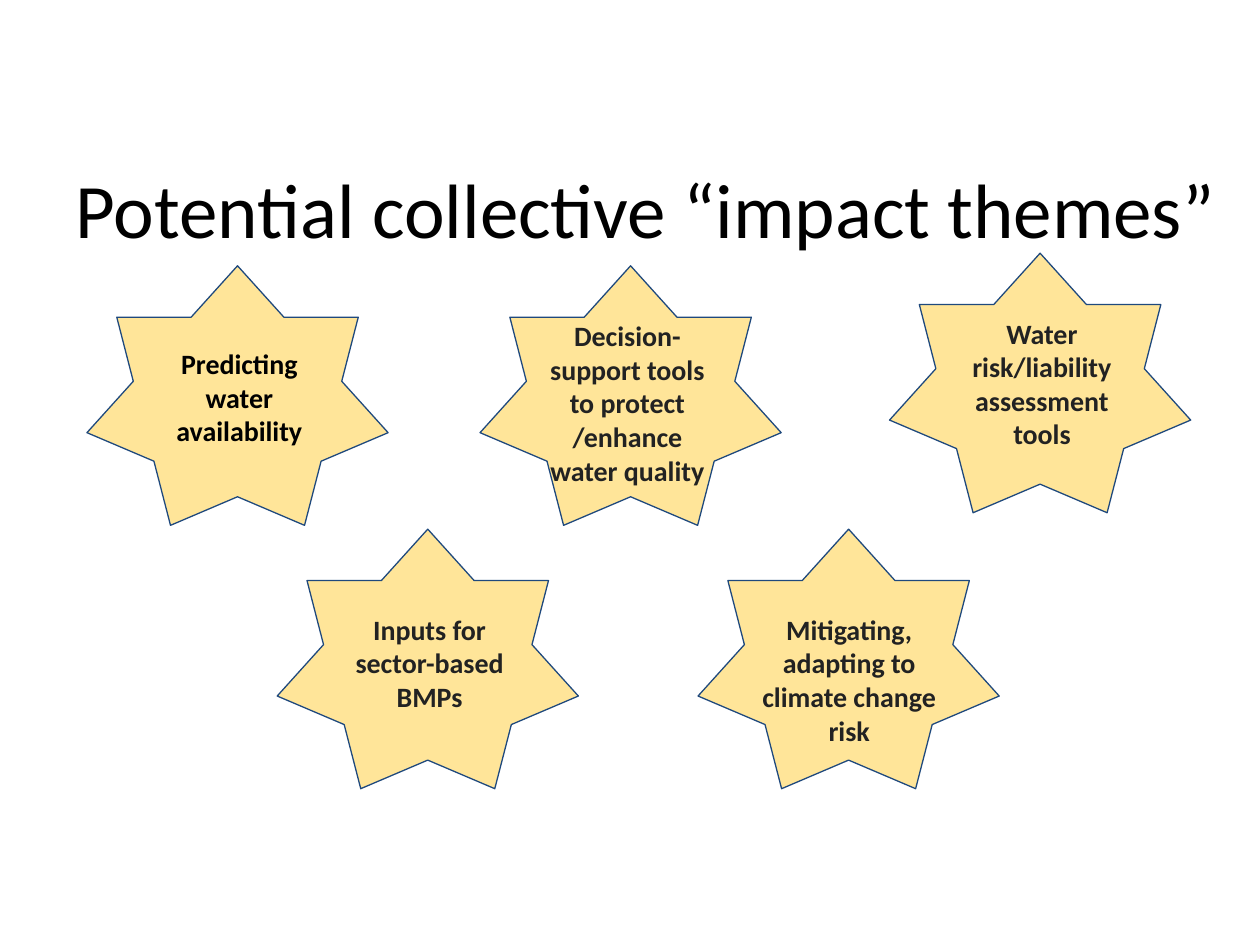
from pptx import Presentation
from pptx.dml.color import RGBColor
from pptx.enum.shapes import MSO_SHAPE
from pptx.enum.text import MSO_ANCHOR, PP_ALIGN
from pptx.util import Inches, Pt

TITLE = "Potential collective “impact themes”"
THEMES = [
    {"label": "Predicting water availability", "star": (0.69, 2.11), "text": (1.1, 2.65), "ink": "000000"},
    {"label": "Inputs for sector-based BMPs", "star": (2.2, 4.2), "text": (2.61, 4.76), "ink": "222222"},
    {"label": "Decision- support tools to protect /enhance water quality", "star": (3.81, 2.11),
     "text": (4.18, 2.43), "ink": "222222"},
    {"label": "Mitigating, adapting to climate change risk", "star": (5.54, 4.2),
     "text": (5.94, 4.76), "ink": "222222"},
    {"label": "Water risk/liability assessment tools", "star": (7.06, 2.01),
     "text": (7.47, 2.41), "ink": "222222"},
]
STAR_SIZE = (2.39, 2.06)
LABEL_SIZE = (1.6, 0.94)
TITLE_BOX = (0.5, 1.02, 9.5, 1.25)
LABEL_FONT = {"name": "Calibri", "size": Pt(16), "bold": True}
TITLE_FONT = {"name": "Calibri", "size": Pt(44), "bold": False}


def color(hex_value):
    return RGBColor.from_string(hex_value)


def apply(target, values):
    for attribute, value in values.items():
        setattr(target, attribute, value)


def write(frame, text, font, ink, align, anchor, inset):
    apply(frame, {"word_wrap": True, "vertical_anchor": anchor,
                  "margin_left": Inches(0.1), "margin_right": Inches(0.1),
                  "margin_top": Inches(inset), "margin_bottom": Inches(inset)})
    paragraph = frame.paragraphs[0]
    paragraph.alignment = align
    run = paragraph.add_run()
    run.text = text
    apply(run.font, font)
    run.font.color.rgb = color(ink)


def add_star(slide, position):
    star = slide.shapes.add_shape(MSO_SHAPE.STAR_7_POINT, *map(Inches, position + STAR_SIZE))
    star.shadow.inherit = False
    star.fill.solid()
    star.fill.fore_color.rgb = color("FFE599")
    star.line.color.rgb = color("1F497D")
    star.line.width = Pt(0.75)


def main():
    """Build the slide of collective impact themes."""
    deck = Presentation()
    deck.slide_width, deck.slide_height = Inches(10), Inches(7.5)
    slide = deck.slides.add_slide(deck.slide_layouts[5])

    heading = slide.shapes.title
    apply(heading, dict(zip(("left", "top", "width", "height"), map(Inches, TITLE_BOX))))
    write(heading.text_frame, TITLE, TITLE_FONT, "000000", PP_ALIGN.LEFT, MSO_ANCHOR.MIDDLE, 0.05)

    for theme in THEMES:
        add_star(slide, theme["star"])
    for theme in THEMES:
        label = slide.shapes.add_textbox(*map(Inches, theme["text"] + LABEL_SIZE))
        write(label.text_frame, theme["label"], LABEL_FONT, theme["ink"],
              PP_ALIGN.CENTER, MSO_ANCHOR.TOP, 0.1)

    deck.save("out.pptx")


if __name__ == "__main__":
    main()
